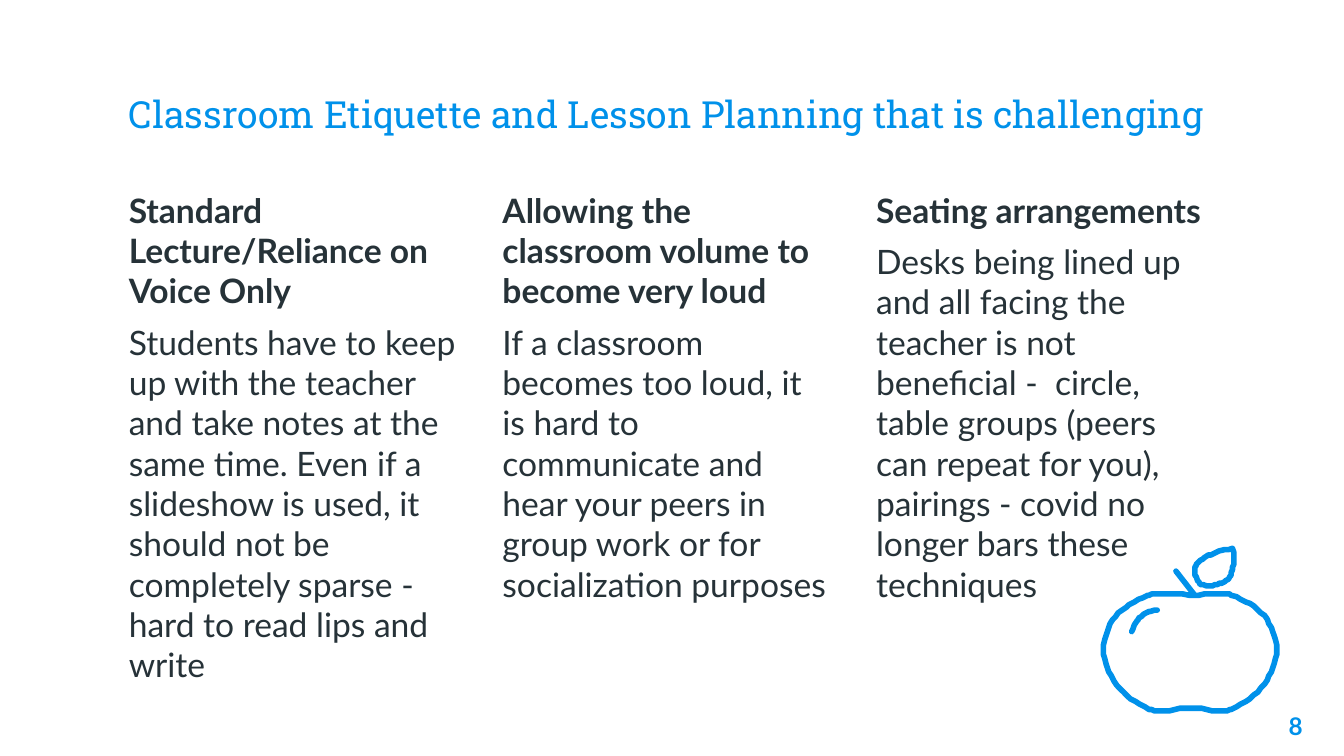
from dataclasses import dataclass

from lxml.etree import SubElement
from pptx import Presentation
from pptx.dml.color import RGBColor
from pptx.enum.text import MSO_ANCHOR as Anchor, PP_ALIGN as Align
from pptx.oxml.ns import qn
from pptx.shapes.group import GroupShape
from pptx.slide import Slide
from pptx.util import Inches, Pt

BLUE = RGBColor(0x00, 0x91, 0xEA)
DARK = RGBColor(0x26, 0x32, 0x38)
WHITE = RGBColor(0xFF, 0xFF, 0xFF)

TITLE_FORMAT = {"name": "Roboto Slab", "size": Pt(20), "bold": False}
HEADING_FORMAT = {"name": "Lato", "size": Pt(18), "bold": True}
BODY_FORMAT = {**HEADING_FORMAT, "bold": False}
NUMBER_FORMAT = {"name": "Lato", "size": Pt(13), "bold": True}

COLUMN_LEFT, COLUMN_STEP = 0.86, 2.78


@dataclass
class Line:
    text: str
    format: dict
    color: RGBColor
    align: Align = Align.LEFT


@dataclass
class Column:
    heading: str
    body: str


@dataclass
class Stroke:
    """A run of points in hundredths of an inch."""
    points: list[tuple[int, int]]
    closed: bool = False


COLUMNS = [
    Column("Standard Lecture/Reliance on Voice Only",
           "Students have to keep up with the teacher and take notes at the same time. "
           "Even if a slideshow is used, it should not be completely sparse - "
           "hard to read lips and write"),
    Column("Allowing the classroom volume to become very loud",
           "If a classroom becomes too loud, it is hard to communicate and hear your "
           "peers in group work or for socialization purposes"),
    Column("Seating arrangements",
           "Desks being lined up and all facing the teacher is not beneficial -  circle, "
           "table groups (peers can repeat for you), pairings - covid no longer bars "
           "these techniques"),
]

LEAF = Stroke([
    (892, 418), (893, 417), (895, 416), (896, 415), (899, 413), (901, 413),
    (903, 412), (907, 410), (911, 409), (914, 409), (917, 408), (918, 411),
    (918, 413), (918, 417), (918, 420), (917, 422), (917, 424), (916, 426),
    (916, 428), (915, 429), (914, 431), (912, 432), (911, 433), (909, 434),
    (907, 434), (906, 435), (904, 435), (902, 436), (901, 436), (898, 436),
    (895, 435), (893, 435), (892, 433), (891, 432), (890, 429), (889, 428),
    (889, 427), (889, 425), (889, 424), (889, 422), (890, 421), (890, 420),
], closed=True)
BODY_AND_STEM = Stroke([
    (889, 443), (885, 443), (880, 442), (871, 442), (866, 442), (861, 442),
    (859, 442), (857, 442), (855, 443), (854, 443), (850, 445), (847, 446),
    (844, 448), (840, 450), (838, 452), (835, 454), (832, 456), (830, 459),
    (828, 461), (826, 464), (825, 467), (824, 470), (823, 473), (822, 476),
    (821, 480), (821, 483), (821, 487), (822, 490), (823, 494), (824, 497),
    (825, 500), (827, 503), (829, 507), (831, 510), (833, 512), (836, 515),
    (838, 517), (841, 520), (845, 522), (848, 524), (852, 526), (855, 528),
    (857, 528), (859, 529), (862, 529), (866, 529), (870, 529), (878, 527),
    (881, 527), (886, 527), (890, 527), (894, 527), (902, 529), (906, 529),
    (909, 529), (913, 529), (915, 528), (916, 528), (920, 526), (923, 524),
    (927, 522), (930, 520), (933, 517), (936, 515), (938, 512), (941, 509),
    (943, 506), (944, 503), (946, 500), (947, 497), (948, 494), (949, 490),
    (950, 487), (950, 483), (950, 480), (949, 476), (948, 473), (947, 470),
    (946, 467), (944, 464), (943, 461), (941, 458), (938, 456), (936, 454),
    (933, 451), (930, 449), (927, 448), (923, 446), (920, 444), (916, 443),
    (915, 442), (911, 442), (907, 442), (903, 442), (896, 442), (892, 443),
    (889, 443), (875, 425),
])
HIGHLIGHT = Stroke([
    (861, 454), (859, 454), (856, 455), (855, 455), (853, 456), (851, 457),
    (850, 458), (849, 459), (847, 460), (847, 461), (846, 462), (844, 465),
    (843, 468), (842, 470),
])


def add_text(slide: Slide, box: tuple[float, float, float, float],
             lines: list[Line], anchor: Anchor = Anchor.TOP) -> None:
    frame = slide.shapes.add_textbox(*map(Inches, box)).text_frame
    frame.word_wrap = True
    frame.vertical_anchor = anchor
    for side in ("left", "right", "top", "bottom"):
        setattr(frame, f"margin_{side}", Inches(0.1))
    for index, line in enumerate(lines):
        paragraph = frame.add_paragraph() if index else frame.paragraphs[0]
        paragraph.alignment = line.align
        paragraph.space_before = Pt(6 if index else 0)
        run = paragraph.add_run()
        run.text = line.text
        for name, value in line.format.items():
            setattr(run.font, name, value)
        run.font.color.rgb = line.color


def add_stroke(group: GroupShape, stroke: Stroke) -> None:
    start, *rest = stroke.points
    builder = group.shapes.build_freeform(*start, scale=Inches(0.01))
    builder.add_line_segments(rest, close=stroke.closed)
    shape = builder.convert_to_shape()
    shape.shadow.inherit = False
    shape.fill.background()
    shape.line.color.rgb = BLUE
    shape.line.width = Pt(3)
    outline = shape._element.spPr.find(qn("a:ln"))
    outline.set("cap", "rnd")
    SubElement(outline, qn("a:round"))


def main() -> None:
    presentation = Presentation()
    presentation.slide_width = Inches(10)
    presentation.slide_height = Inches(10 * 9 / 16)
    slide = presentation.slides.add_slide(presentation.slide_layouts[6])
    slide.background.fill.solid()
    slide.background.fill.fore_color.rgb = WHITE

    title = "Classroom Etiquette and Lesson Planning that is challenging"
    add_text(slide, (COLUMN_LEFT, 0.34, 8.28, 0.77),
             [Line(title, TITLE_FORMAT, BLUE)], Anchor.BOTTOM)
    for index, column in enumerate(COLUMNS):
        add_text(slide, (COLUMN_LEFT + index * COLUMN_STEP, 1.31, 2.65, 4.07),
                 [Line(column.heading, HEADING_FORMAT, DARK),
                  Line(column.body, BODY_FORMAT, DARK)])
    add_text(slide, (9.19, 5.19, 0.6, 0.43),
             [Line("8", NUMBER_FORMAT, BLUE, Align.RIGHT)])

    apple = slide.shapes.add_group_shape()
    for stroke in (LEAF, BODY_AND_STEM, HIGHLIGHT):
        add_stroke(apple, stroke)

    presentation.save("out.pptx")


if __name__ == "__main__":
    main()
